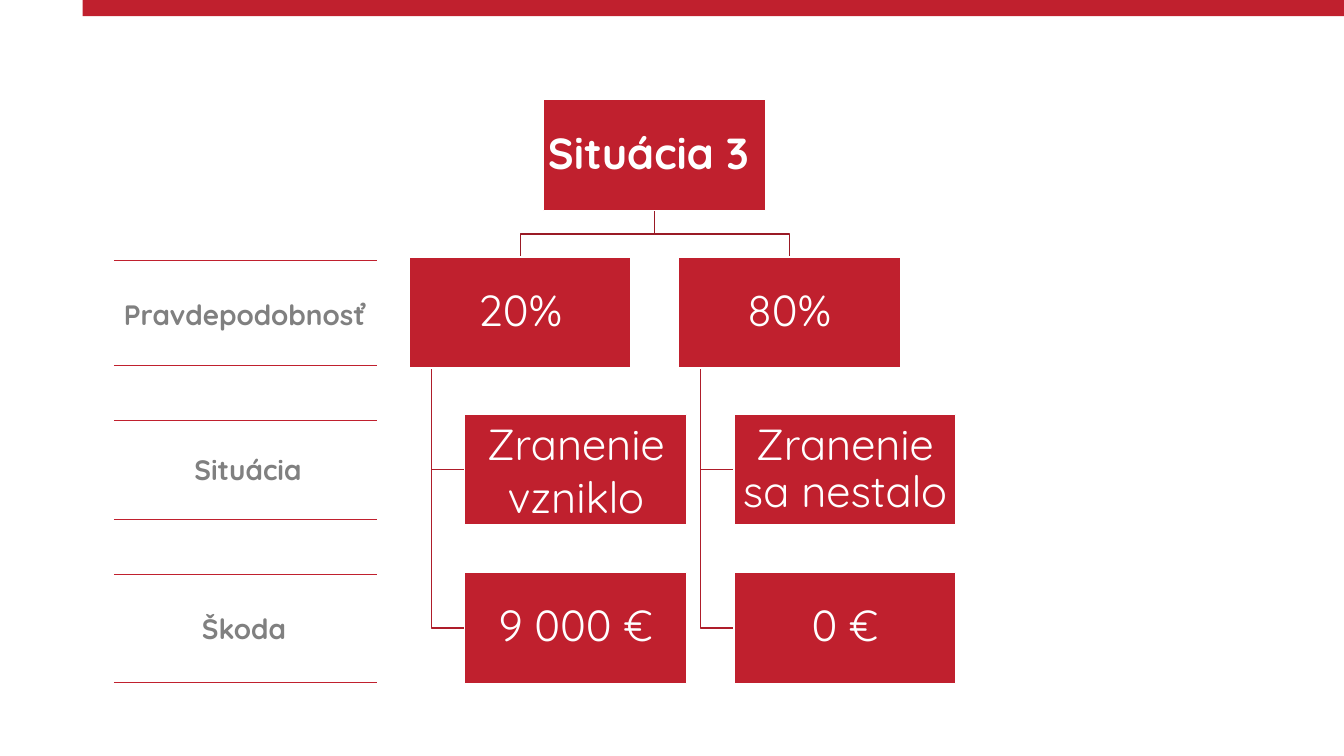
from dataclasses import dataclass

from pptx import Presentation
from pptx.dml.color import RGBColor
from pptx.enum.shapes import MSO_CONNECTOR as CONNECTOR, MSO_SHAPE as SHAPE
from pptx.enum.text import MSO_ANCHOR as ANCHOR, PP_ALIGN as ALIGN
from pptx.oxml.ns import qn
from pptx.util import Inches, Pt


@dataclass(frozen=True)
class Theme:
    font: str = "Quicksand"
    red: RGBColor = RGBColor(0xC0, 0x20, 0x2E)
    root_branch: RGBColor = RGBColor(0x9A, 0x1A, 0x25)
    leaf_branch: RGBColor = RGBColor(0xAE, 0x1D, 0x2A)
    white: RGBColor = RGBColor(0xFF, 0xFF, 0xFF)
    grey: RGBColor = RGBColor(0x80, 0x80, 0x80)
    node_size: Pt = Pt(31)
    label_size: Pt = Pt(20)


theme = Theme()
prs = Presentation()
prs.slide_width, prs.slide_height = Inches(13.33), Inches(7.5)
slide = prs.slides.add_slide(prs.slide_layouts[6])
shapes = slide.shapes


def add_branch(points, color):
    """Draw an open right-angled line through points given in inches."""
    start, *rest = [(Inches(x), Inches(y)) for x, y in points]
    builder = shapes.build_freeform(*start)
    builder.add_line_segments(rest, close=False)
    branch = builder.convert_to_shape()
    branch.shadow.inherit = False
    branch.fill.background()
    branch.line.color.rgb = color
    branch.line.width = Pt(1)


def write(shape, text, size, color, bold=False, align=ALIGN.CENTER):
    shape.text_frame.text = text
    paragraph = shape.text_frame.paragraphs[0]
    paragraph.alignment = align
    font = paragraph.runs[0].font
    font.name, font.size, font.bold = theme.font, size, bold
    font.color.rgb = color
    return paragraph


top_bar = shapes.add_shape(SHAPE.RECTANGLE, Inches(0.82), 0, Inches(12.51), Inches(0.16))
top_bar.shadow.inherit = False
top_bar.fill.solid()
top_bar.fill.fore_color.rgb = theme.red
top_bar.line.fill.background()

# Tree: one root, two outcomes, each with a situation and a damage
NODE_W, NODE_H = 2.2, 1.1
ROOT_X = 5.39
ROW_TOPS = [0.99, 2.55, 4.11, 5.68]
TRUNK_INDENT, LEAF_INDENT = 0.22, 0.55
outcomes = [
    (4.06, ["20%", "Zranenie vzniklo", "9 000 €"]),
    (6.73, ["80%", "Zranenie sa nestalo", "0 €"]),
]

root_top, outcome_top, *leaf_tops = ROW_TOPS
root_center, root_bottom = ROOT_X + NODE_W / 2, root_top + NODE_H
fork_y = (root_bottom + outcome_top) / 2
nodes = [(ROOT_X, root_top, "Situácia 3 ")]

for outcome_x, texts in outcomes:
    outcome_center = outcome_x + NODE_W / 2
    add_branch([(root_center, root_bottom), (root_center, fork_y),
                (outcome_center, fork_y), (outcome_center, outcome_top)], theme.root_branch)
    trunk_x, leaf_x = outcome_x + TRUNK_INDENT, outcome_x + LEAF_INDENT
    for leaf_top in leaf_tops:
        leaf_middle = leaf_top + NODE_H / 2
        add_branch([(trunk_x, outcome_top + NODE_H), (trunk_x, leaf_middle),
                    (leaf_x, leaf_middle)], theme.leaf_branch)
    nodes += zip([outcome_x, leaf_x, leaf_x], ROW_TOPS[1:], texts)

for x, top, text in nodes:
    node = shapes.add_shape(SHAPE.RECTANGLE, Inches(x), Inches(top), Inches(NODE_W), Inches(NODE_H))
    node.shadow.inherit = False
    node.fill.solid()
    node.fill.fore_color.rgb = theme.red
    node.line.color.rgb = theme.white
    node.line.width = Pt(1)
    frame = node.text_frame
    frame.word_wrap = True
    frame.vertical_anchor = ANCHOR.MIDDLE
    frame.margin_left = frame.margin_right = frame.margin_top = frame.margin_bottom = Inches(0.02)
    paragraph = write(node, text, theme.node_size, theme.white, bold=top == root_top)
    paragraph.line_spacing = 1.0 if text == "Zranenie vzniklo" else 0.9

# Row labels, each between two thin rules
RULE_LEFT, RULE_RIGHT = 1.13, 3.74
labels = [
    ("Pravdepodobnosť", 1.13, 2.9, 2.71, ALIGN.LEFT, (2.58, 3.62)),
    ("Situácia", 1.17, 4.44, 2.58, ALIGN.CENTER, (4.17, 5.15)),
    ("Škoda", 1.13, 6.02, 2.58, ALIGN.CENTER, (5.7, 6.77)),
]
for text, left, top, width, align, rule_ys in labels:
    label = shapes.add_textbox(Inches(left), Inches(top), Inches(width), Inches(0.44))
    label.text_frame.word_wrap = True
    write(label, text, theme.label_size, theme.grey, bold=True, align=align)
    for y in rule_ys:
        rule = shapes.add_connector(CONNECTOR.STRAIGHT, Inches(RULE_LEFT), Inches(y),
                                    Inches(RULE_RIGHT), Inches(y))
        rule.line.color.rgb = theme.red
        rule.line.width = Pt(0.5)
        properties = rule.element.spPr
        properties.append(properties.makeelement(qn("a:effectLst"), {}))

prs.save("out.pptx")
